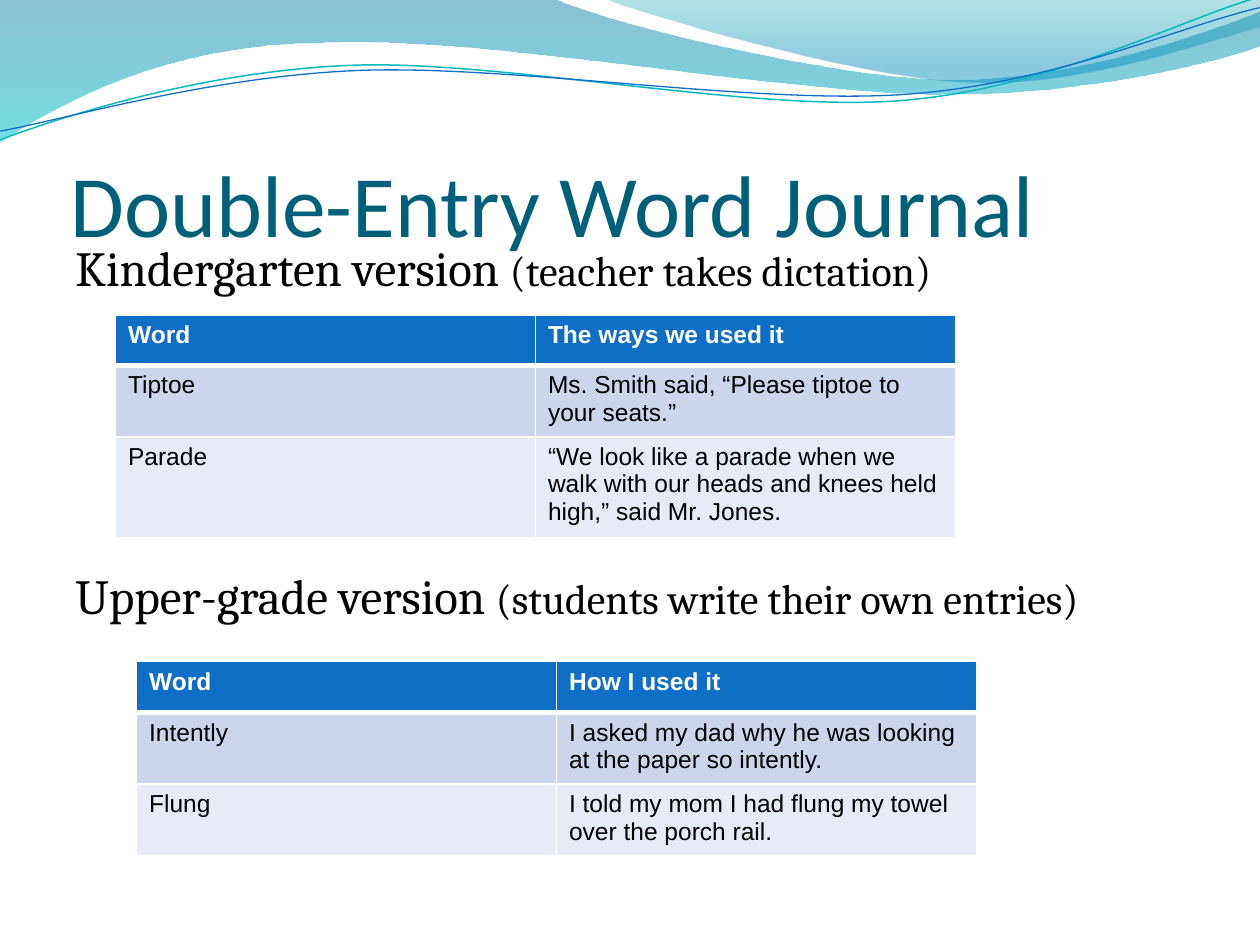
from lxml import etree
from pptx import Presentation
from pptx.dml.color import RGBColor
from pptx.enum import text
from pptx.oxml import ns
from pptx.util import Pt

WHITE = RGBColor(0xFF, 0xFF, 0xFF)
BLACK = RGBColor(0x00, 0x00, 0x00)
TITLE_TEAL = RGBColor(0x00, 0x5F, 0x79)
BLUE = RGBColor(0x0F, 0x6F, 0xC6)
AQUA = RGBColor(0x0A, 0xB8, 0xBF)
BAND_DARK = RGBColor(0xCC, 0xD5, 0xEA)
BAND_LIGHT = RGBColor(0xE7, 0xEB, 0xF5)
DEEP_BLUE = RGBColor(0x00, 0x74, 0xA1)
CYAN = RGBColor(0x00, 0xC6, 0xCF)
TEAL = RGBColor(0x00, 0xA1, 0xA9)
SKY = RGBColor(0x00, 0x8B, 0xBF)

WIDE_WAVE = [(0, -0.7), (316.8, -0.7),
             (342.7, 12.2, 478.1, 45.4, 545.8, 45.4),
             (614.2, 45.4, 689.8, 18.7, 720, 6.5), (720.7, 25.9),
             (707.8, 31.7, 626.4, 54.7, 537.1, 54),
             (447.8, 54, 275, 20.2, 185, 24.5),
             (92.9, 25.2, 33.1, 59.8, -0.7, 81.4)]
RIGHT_WAVE = [(344.9, -0.7),
              (366.5, 7.9, 491, 44.6, 553.7, 46.8),
              (616.3, 49.7, 691.9, 23, 720, 15.1), (720, 0)]
AQUA_LINE = [(0, 79.9),
             (34.6, 67, 113.8, 41, 199.4, 37.4),
             (284.4, 33.8, 427, 64.1, 513.4, 57.6),
             (599.8, 51.1, 675.4, 10.8, 718.6, -1.4)]
BLUE_LINE = [(0, 74.9),
             (33.8, 69.1, 118.1, 43.9, 203.8, 40.3),
             (290.2, 36.7, 429.8, 59.8, 516.2, 54),
             (601.9, 48.2, 673.5, 15.1, 720, 4.3)]

HEADINGS = [("Kindergarten version ", "(teacher takes dictation)", 0),
            ("Upper-grade version ", "(students write their own entries)", 154)]
KINDERGARTEN = [
    ("Word", "The ways we used it"),
    ("Tiptoe", "Ms. Smith said, “Please tiptoe to your seats.”"),
    ("Parade", "“We look like a parade when we walk with our heads and knees "
               "held high,” said Mr. Jones."),
]
UPPER_GRADE = [
    ("Word", "How I used it"),
    ("Intently", "I asked my dad why he was looking at the paper so intently."),
    ("Flung", "I told my mom I had flung my towel over the porch rail."),
]


def add_outline(slide, left, top, outline, close):
    """Add a freeform of lines and cubic curves relative to a corner."""
    ends = [(Pt(left + segment[-2]), Pt(top + segment[-1])) for segment in outline]
    builder = slide.shapes.build_freeform(*ends[0])
    builder.add_line_segments(ends[1:], close=close)
    shape = builder.convert_to_shape()
    shape.shadow.inherit = False
    sides = list(shape.element.spPr.iter(ns.qn("a:lnTo")))
    for side, segment in zip(sides, outline[1:]):
        if len(segment) == 6:
            side.tag = ns.qn("a:cubicBezTo")
            for index, start in enumerate((0, 2)):
                x, y = segment[start:start + 2]
                control = etree.Element(ns.qn("a:pt"), x=str(Pt(left + x) - shape.left),
                                        y=str(Pt(top + y) - shape.top))
                side.insert(index, control)
    return shape


def add_waves(slide, left, top):
    """Draw the translucent waves and the two thin lines over them."""
    for outline, stops in ((WIDE_WAVE, ((0, DEEP_BLUE, 45), (1, CYAN, 55))),
                           (RIGHT_WAVE, ((0, TEAL, 30), (0.8, SKY, 45)))):
        wave = add_outline(slide, left, top, outline, True)
        wave.line.fill.background()
        wave.fill.gradient()
        wave.fill.gradient_angle = 270
        for stop, (position, color, _) in zip(wave.fill.gradient_stops, stops):
            stop.position = position
            stop.color.rgb = color
        colors = wave.element.spPr.iter(ns.qn("a:srgbClr"))
        for color, (_, _, opacity) in zip(colors, stops):
            etree.SubElement(color, ns.qn("a:alpha"), val=str(opacity * 1000))
    for outline, color, width in ((AQUA_LINE, AQUA, 0.85), (BLUE_LINE, BLUE, 0.75)):
        thread = add_outline(slide, left, top, outline, False)
        thread.fill.background()
        thread.line.color.rgb = color
        thread.line.width = Pt(width)


def add_title(slide, left, top, width, height):
    """Place the slide title at the bottom of its box."""
    frame = slide.shapes.add_textbox(Pt(left), Pt(top), Pt(width), Pt(height)).text_frame
    frame.word_wrap = True
    frame.vertical_anchor = text.MSO_ANCHOR.BOTTOM
    frame.margin_left, frame.margin_right, frame.margin_bottom = Pt(4.3), 0, 0
    title = frame.paragraphs[0]
    title.text = "Double-Entry Word Journal"
    title.font.size = Pt(50)
    title.font.name = "Calibri"
    title.font.color.rgb = TITLE_TEAL


def add_headings(slide, left, top, width, height):
    """Place the two version headings, spaced to leave room for a table."""
    frame = slide.shapes.add_textbox(Pt(left), Pt(top), Pt(width), Pt(height)).text_frame
    frame.word_wrap = True
    for index, (version, detail, gap) in enumerate(HEADINGS):
        heading = frame.add_paragraph() if index else frame.paragraphs[0]
        heading.space_before = Pt(gap)
        heading.font.name = "Cambria"
        heading.font.color.rgb = BLACK
        for words, size in ((version, 28), (detail, 24)):
            run = heading.add_run()
            run.text = words
            run.font.size = Pt(size)


def add_borders(cell, widths):
    """Give a cell white borders, one width for each named side."""
    properties = cell._tc.get_or_add_tcPr()
    for side, width in widths.items():
        border = etree.SubElement(properties, ns.qn(f"a:ln{side}"), w=str(Pt(width)))
        solid = etree.SubElement(border, ns.qn("a:solidFill"))
        etree.SubElement(solid, ns.qn("a:srgbClr"), val=str(WHITE))


def add_journal(slide, left, top, width, height, row_heights, entries):
    """Place a journal table with a blue header and banded entries."""
    frame = slide.shapes.add_table(len(entries), 2, Pt(left), Pt(top), Pt(width), Pt(height))
    journal = frame.table
    for row, entry in enumerate(entries):
        journal.rows[row].height = Pt(row_heights[row])
        header = row == 0
        fill = BLUE if header else (BAND_LIGHT, BAND_DARK)[row % 2]
        for column, words in enumerate(entry):
            cell = journal.cell(row, column)
            add_borders(cell, {"L": 1, "R": 1, "T": 3 if row == 1 else 1,
                               "B": 3 if header else 1})
            cell.fill.solid()
            cell.fill.fore_color.rgb = fill
            cell.text = words
            font = cell.text_frame.paragraphs[0].font
            font.size = Pt(14)
            font.name = "Arial"
            font.bold = header
            font.color.rgb = WHITE if header else BLACK
    frame.height = Pt(height)


def main():
    """Build the slide and save it."""
    deck = Presentation()
    deck.slide_width, deck.slide_height = Pt(720), Pt(540)
    slide = deck.slides.add_slide(deck.slide_layouts[6])
    add_waves(slide, 0, 0)
    add_title(slide, 36, 55.8, 648, 90)
    add_headings(slide, 36, 132, 648, 356)
    add_journal(slide, 66, 180, 480, 127.4, (28.8, 29.2, 29.2), KINDERGARTEN)
    add_journal(slide, 78, 378, 480, 110.9, (29.2, 29.2, 29.2), UPPER_GRADE)
    deck.save("out.pptx")


if __name__ == "__main__":
    main()
